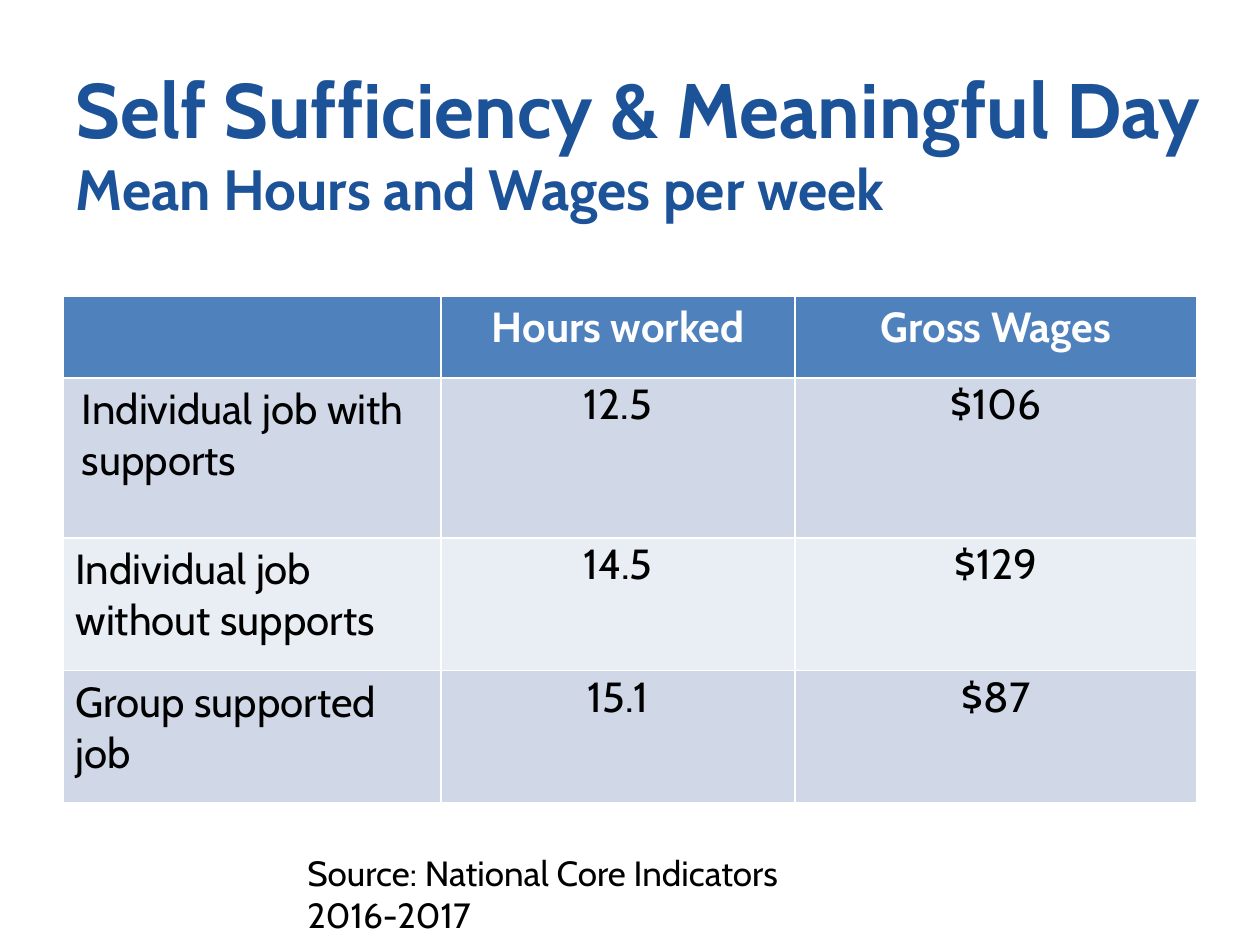
import pptx
import pptx.util
import pptx.dml.color
import pptx.enum.text
from pptx.util import Inches

RGBColor = pptx.dml.color.RGBColor
PP_ALIGN = pptx.enum.text.PP_ALIGN
MSO_ANCHOR = pptx.enum.text.MSO_ANCHOR

FONT = "Cabin"
NAVY = RGBColor(0x1C, 0x52, 0x98)
HEADER_BLUE = RGBColor(0x4F, 0x81, 0xBD)
BANDS = (RGBColor(0xE9, 0xED, 0xF4), RGBColor(0xD0, 0xD8, 0xE8))
WHITE = RGBColor(0xFF, 0xFF, 0xFF)
BLACK = RGBColor(0, 0, 0)

COLUMN_WIDTHS = (3, 2.81, 3.19)
ROW_HEIGHTS = (0.65, 1.27, 1.05, 1.05)
WAGE_ROWS = (
    ("", "Hours worked", "Gross Wages"),
    ("Individual job with supports", "12.5", "$106"),
    ("Individual job without supports", "14.5", "$129"),
    ("Group supported job", "15.1", "$87"),
)


def add_span(para, text, size, color, bold=False):
    span = para.add_run()
    span.text = text
    span.font.name = FONT
    span.font.size = pptx.util.Pt(size)
    span.font.color.rgb = color
    span.font.bold = bold


def add_lines(box, lines, color, bold=False):
    frame = box.text_frame
    frame.word_wrap = True
    frame.auto_size = pptx.enum.text.MSO_AUTO_SIZE.NONE
    frame.vertical_anchor = MSO_ANCHOR.MIDDLE
    para = frame.paragraphs[0]
    para.alignment = PP_ALIGN.LEFT
    for index, (text, size) in enumerate(lines):
        if index:
            para.add_line_break()
        add_span(para, text, size, color, bold)


def place_title(page):
    title = page.shapes.title
    title.left, title.top = Inches(0.5), Inches(0.5)
    title.width, title.height = Inches(9.39), Inches(1.25)
    add_lines(title, (("Self Sufficiency & Meaningful Day", 44.1),
                      ("Mean Hours and Wages per week", 32.4)), NAVY, True)


def fill_cell(cell, text, row, column):
    is_header = row == 0
    cell.fill.solid()
    cell.fill.fore_color.rgb = HEADER_BLUE if is_header else BANDS[row % 2]
    para = cell.text_frame.paragraphs[0]
    if column:
        para.alignment = PP_ALIGN.CENTER
        if not is_header:
            cell.margin_left = cell.margin_top = cell.margin_right = Inches(0.01)
            cell.margin_bottom = 0
    if text:
        add_span(para, text, 24, WHITE if is_header else BLACK, is_header)


def add_wage_table(page):
    table = page.shapes.add_table(
        len(ROW_HEIGHTS), len(COLUMN_WIDTHS), Inches(0.5), Inches(2.35),
        Inches(sum(COLUMN_WIDTHS)), Inches(sum(ROW_HEIGHTS))).table
    for column, width in zip(table.columns, COLUMN_WIDTHS):
        column.width = Inches(width)
    for row, height in zip(table.rows, ROW_HEIGHTS):
        row.height = Inches(height)
    for row, texts in enumerate(WAGE_ROWS):
        for column, text in enumerate(texts):
            fill_cell(table.cell(row, column), text, row, column)
    first_label = table.cell(1, 0).text_frame.paragraphs[0]
    first_label._p.get_or_add_pPr().set("marL", str(Inches(0.05)))


def add_source(page):
    box = page.shapes.add_textbox(Inches(2.34), Inches(6.89), Inches(5.48), Inches(0.4))
    add_lines(box, (("Source: National Core Indicators", 20), ("2016-2017", 20)), BLACK)


def main():
    deck = pptx.Presentation()
    deck.slide_width, deck.slide_height = Inches(10), Inches(7.5)
    page = deck.slides.add_slide(deck.slide_layouts[5])
    place_title(page)
    add_wage_table(page)
    add_source(page)
    deck.save("out.pptx")


if __name__ == "__main__":
    main()
